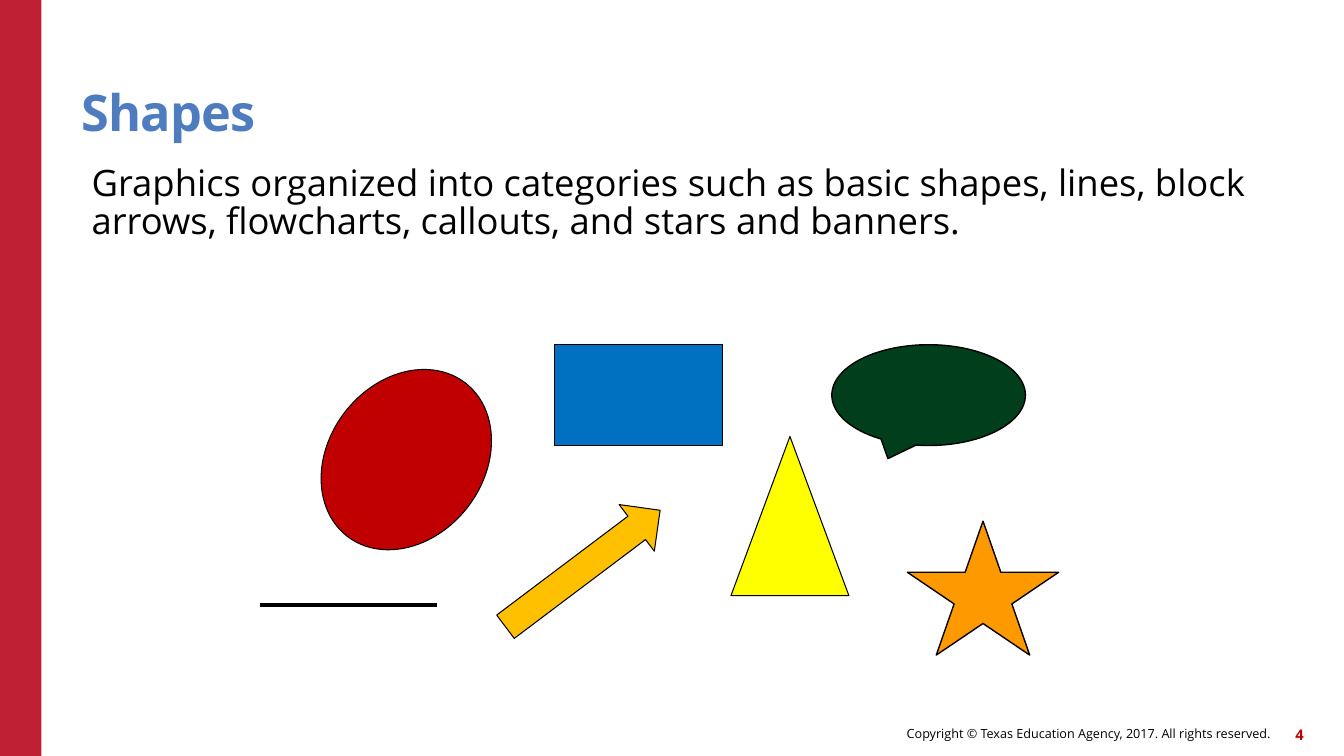
from dataclasses import dataclass

from lxml import etree
from pptx import Presentation
from pptx import util as u
from pptx.dml import color
from pptx.enum import shapes, text
from pptx.oxml import ns


@dataclass(frozen=True)
class Theme:
    font: str = "Open Sans"
    black: str = "000000"
    band: str = "C02033"
    title: str = "4E7CBE"
    red: str = "C00000"
    blue: str = "0070C0"
    yellow: str = "FFFF00"
    gold: str = "FFC000"
    green: str = "003E1C"
    orange: str = "FF9900"
    head: float = 36
    body: float = 26
    foot: float = 9
    page: float = 10.5
    thin: float = 0.75
    mid: float = 1
    thick: float = 3


THEME = Theme()
KIND = shapes.MSO_SHAPE
ALIGN = text.PP_ALIGN
ANCHOR = text.MSO_ANCHOR


def rgb(code):
    return color.RGBColor.from_string(code)


def inch(box):
    return [u.Inches(n) for n in box]


def add_text(slide, box, words, size, tint=THEME.black, bold=False,
             align=ALIGN.LEFT, anchor=ANCHOR.MIDDLE, inset=(0, 0),
             lead=1.0, track=0):
    frame = slide.shapes.add_textbox(*inch(box)).text_frame
    frame.word_wrap = True
    frame.vertical_anchor = anchor
    side, top = inch(inset)
    frame.margin_left = frame.margin_right = side
    frame.margin_top = frame.margin_bottom = top
    para = frame.paragraphs[0]
    para.alignment = align
    para.line_spacing = lead
    run = para.add_run()
    run.text = words
    font = run.font
    font.name = THEME.font
    font.size = u.Pt(size)
    font.bold = bold
    font.color.rgb = rgb(tint)
    if track:
        font._element.set("spc", str(track))


def add_form(slide, kind, box, fill, width=0, turn=0, adjust=()):
    form = slide.shapes.add_shape(kind, *inch(box))
    form.shadow.inherit = False
    form.fill.solid()
    form.fill.fore_color.rgb = rgb(fill)
    form.rotation = turn
    for place, value in enumerate(adjust):
        form.adjustments[place] = value
    if width:
        form.line.color.rgb = rgb(THEME.black)
        form.line.width = u.Pt(width)
    else:
        form.line.fill.background()


def add_line(slide, ends, width):
    line = slide.shapes.add_connector(shapes.MSO_CONNECTOR.STRAIGHT, *inch(ends))
    line.line.color.rgb = rgb(THEME.black)
    line.line.width = u.Pt(width)
    etree.SubElement(line._element.spPr, ns.qn("a:effectLst"))


def add_frame(slide):
    add_form(slide, KIND.RECTANGLE, (0, 0, 0.41, 7.5), THEME.band)
    add_text(slide, (6.14, 7.12, 6.46, 0.32),
             "Copyright © Texas Education Agency, 2017. All rights reserved.",
             THEME.foot, align=ALIGN.RIGHT)
    add_text(slide, (12.51, 7.13, 0.42, 0.32), "4", THEME.page, THEME.red,
             bold=True, align=ALIGN.RIGHT)


def add_forms(slide):
    thin, mid = THEME.thin, THEME.mid
    add_form(slide, KIND.ISOSCELES_TRIANGLE, (7.25, 4.33, 1.17, 1.58),
             THEME.yellow, thin)
    add_form(slide, KIND.RECTANGLE, (5.5, 3.42, 1.67, 1), THEME.blue, thin)
    add_form(slide, KIND.OVAL, (3.07, 3.79, 1.92, 1.54), THEME.red, thin, 307.4)
    add_form(slide, KIND.RIGHT_ARROW, (4.82, 5.35, 1.92, 0.58),
             THEME.gold, thin, 323)
    add_form(slide, KIND.OVAL_CALLOUT, (8.25, 3.42, 1.92, 1),
             THEME.green, mid, adjust=(-0.21, 0.63))
    add_form(slide, KIND.STAR_5_POINT, (9, 5.17, 1.5, 1.33), THEME.orange, mid)
    add_line(slide, (2.58, 6, 4.33, 6), THEME.thick)


def main():
    deck = Presentation()
    deck.slide_width, deck.slide_height = inch((13.33, 7.5))
    slide = deck.slides.add_slide(deck.slide_layouts[6])
    add_frame(slide)
    add_text(slide, (0.81, 0.45, 11, 0.96), "Shapes", THEME.head, THEME.title,
             bold=True, anchor=ANCHOR.BOTTOM, lead=0.9, track=-60)
    add_text(slide, (0.81, 1.55, 12.09, 5.18),
             "Graphics organized into categories such as basic shapes, lines, "
             "block arrows, flowcharts, callouts, and stars and banners.",
             THEME.body, anchor=ANCHOR.TOP, inset=(0.1, 0.1), lead=0.87)
    add_forms(slide)
    deck.save("out.pptx")


if __name__ == "__main__":
    main()
